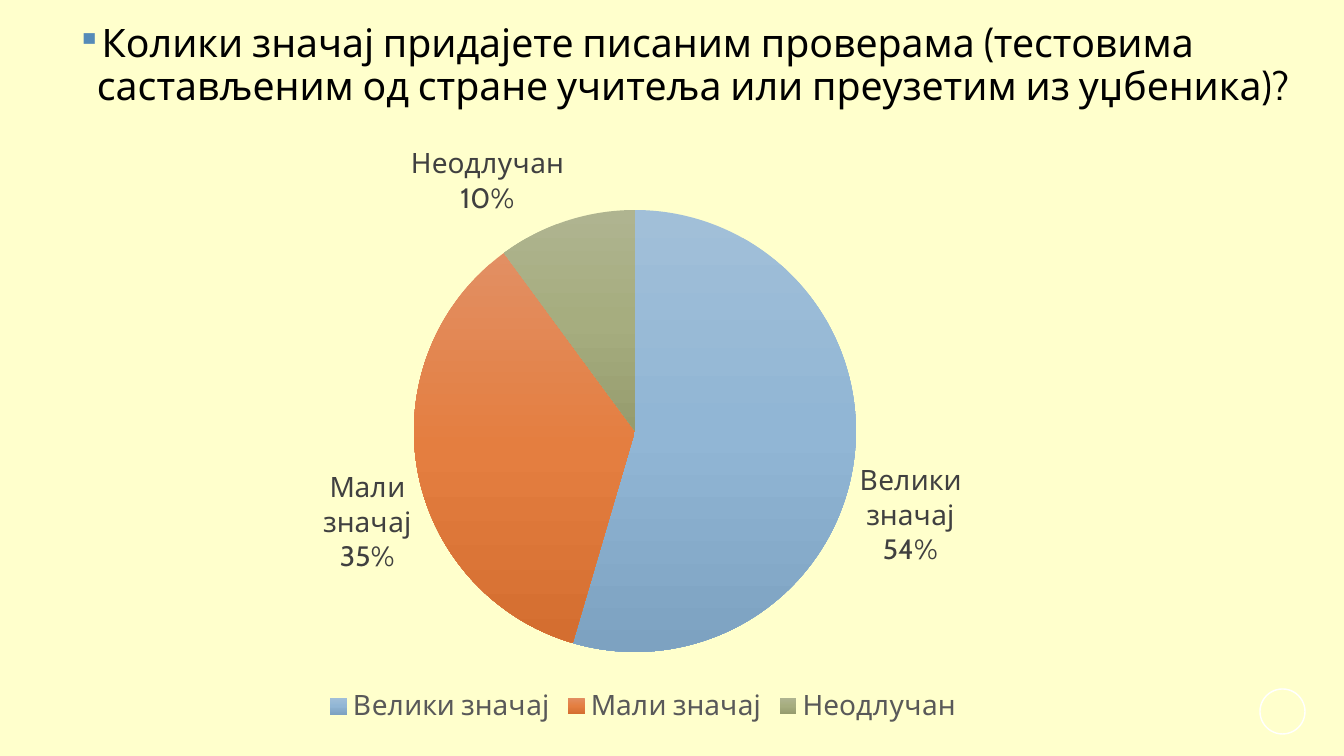
"""Survey slide: a question above a pie chart of the answers."""
from pptx import Presentation, util as u
from pptx.chart.data import CategoryChartData
from pptx.dml.color import RGBColor
from pptx.enum import chart as ch, shapes, text
from pptx.oxml import parse_xml
from pptx.oxml.ns import nsdecls, qn

QUESTION = ("Колики значај придајете писаним проверама (тестовима "
            "састављеним од стране учитеља или преузетим из уџбеника)?")
ANSWERS = [
    ("Велики значај", 54, ("A1BFD8", "91B6D5", "7DA2C1")),
    ("Мали значај", 35, ("E28F63", "E47E40", "D46E30")),
    ("Неодлучан", 10, ("AFB490", "A6AD7F", "969C6E")),
]
FONT = "Cabin"
CREAM = RGBColor(0xFF, 0xFF, 0xCC)
WHITE = RGBColor(0xFF, 0xFF, 0xFF)
BLACK = RGBColor(0, 0, 0)
LABEL_GREY = RGBColor(0x40, 0x40, 0x40)
LEGEND_GREY = RGBColor(0x59, 0x59, 0x59)
BULLET = "558BB8"

PX = 9071
SLIDE = (1344, 756)
RING = (1260, 689, 45, 45)
QUESTION_BOX = (67, 19, 1233, 93)
CHART_BOX = (217, 127, 852, 602)
PIE_BOX = (414, 210, 442, 442)
INDENT = 20


def px(*lengths):
    return [u.Emu(n * PX) for n in lengths]


def set_font(font, size, color):
    font.name, font.size = FONT, u.Pt(size)
    font.color.rgb = color


def add_ring(s):
    sp = s.shapes.add_shape(shapes.MSO_SHAPE.OVAL, *px(*RING))
    sp.shadow.inherit = False
    sp.fill.background()
    sp.line.color.rgb = WHITE
    sp.line.width = u.Pt(1)


def add_question(s):
    tf = s.shapes.add_textbox(*px(*QUESTION_BOX)).text_frame
    tf.word_wrap = True
    tf.vertical_anchor = text.MSO_ANCHOR.TOP
    p = tf.paragraphs[0]
    p.text = QUESTION
    p.line_spacing = 0.9
    pPr = p._p.get_or_add_pPr()
    pPr.set("marL", str(INDENT * PX))
    pPr.set("indent", str(-INDENT * PX))
    for xml in (f'<a:buClr {nsdecls("a")}><a:srgbClr val="{BULLET}"/></a:buClr>',
                f'<a:buSzPct {nsdecls("a")} val="85000"/>',
                f'<a:buChar {nsdecls("a")} char="▪"/>'):
        pPr.append(parse_xml(xml))
    set_font(p.runs[0].font, 28, BLACK)


def fill_slice(point, colors):
    stops = "".join(f'<a:gs pos="{i * 50000}"><a:srgbClr val="{c}"/></a:gs>'
                    for i, c in enumerate(colors))
    point.format.line.fill.background()
    point.format.fill.gradient()
    spPr = point._element.find(f'.//{qn("c:spPr")}') if hasattr(point, "_element") else None
    if spPr is None:
        spPr = point.format._element if hasattr(point.format, "_element") else None
    return spPr, stops


def fill_slices(series):
    for i, (_, _, colors) in enumerate(ANSWERS):
        point = series.points[i]
        point.format.fill.gradient()
        point.format.line.fill.background()
    for grad, (_, _, colors) in zip(series._element.findall(f'.//{qn("a:gradFill")}'), ANSWERS):
        stops = "".join(f'<a:gs pos="{i * 50000}"><a:srgbClr val="{c}"/></a:gs>'
                        for i, c in enumerate(colors))
        grad.getparent().replace(grad, parse_xml(
            f'<a:gradFill {nsdecls("a")} rotWithShape="1"><a:gsLst>{stops}</a:gsLst>'
            '<a:lin ang="5400000" scaled="0"/></a:gradFill>'))


def place_pie(chart):
    left, top, width, height = CHART_BOX
    x, y, w, h = PIE_BOX
    parts = {"x": (x - left) / width, "y": (y - top) / height,
             "w": w / width, "h": h / height}
    sizes = "".join(f'<c:{k} val="{v:.4f}"/>' for k, v in parts.items())
    area = chart._chartSpace.chart.plotArea
    for old in area.findall(qn("c:layout")):
        area.remove(old)
    area.insert(0, parse_xml(
        f'<c:layout {nsdecls("c")}><c:manualLayout><c:layoutTarget val="inner"/>'
        f'<c:xMode val="edge"/><c:yMode val="edge"/>{sizes}</c:manualLayout></c:layout>'))


def add_pie(s):
    data = CategoryChartData()
    data.categories = [name for name, _, _ in ANSWERS]
    data.add_series("Series 1", [value for _, value, _ in ANSWERS])
    chart = s.shapes.add_chart(ch.XL_CHART_TYPE.PIE, *px(*CHART_BOX), data).chart
    set_font(chart.font, 10, BLACK)
    chart.has_title = False
    chart.has_legend = True
    chart.legend.position = ch.XL_LEGEND_POSITION.BOTTOM
    chart.legend.include_in_layout = False
    set_font(chart.legend.font, 20, LEGEND_GREY)
    chart.plots[0].vary_by_categories = True
    series = chart.plots[0].series[0]
    fill_slices(series)
    labels = series.data_labels
    set_font(labels.font, 20, LABEL_GREY)
    labels.number_format, labels.number_format_is_linked = '0"%"', False
    labels.position = ch.XL_LABEL_POSITION.OUTSIDE_END
    labels.show_category_name = labels.show_value = True
    labels.show_percentage = False
    labels._element.find(qn("c:showBubbleSize")).addnext(
        parse_xml(f'<c:separator {nsdecls("c")}>\n</c:separator>'))
    place_pie(chart)


def main():
    prs = Presentation()
    prs.slide_width, prs.slide_height = px(*SLIDE)
    s = prs.slides.add_slide(prs.slide_layouts[6])
    s.background.fill.solid()
    s.background.fill.fore_color.rgb = CREAM
    add_ring(s)
    add_question(s)
    add_pie(s)
    prs.save("out.pptx")


if __name__ == "__main__":
    main()
